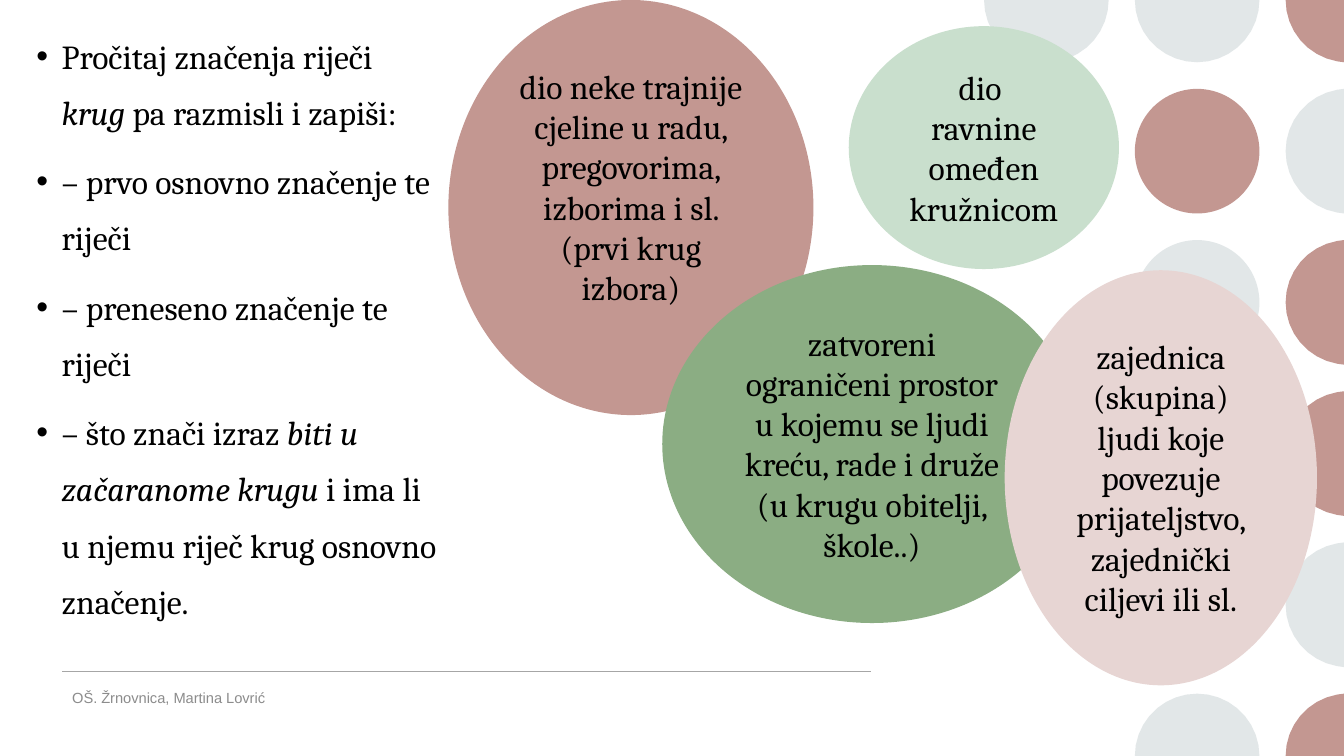
import math
from lxml import etree
from pptx import Presentation
from pptx import util as u
from pptx.dml.color import RGBColor
from pptx.enum import shapes, text
from pptx.oxml.ns import qn

# Content: each paragraph is a list of (text, italic) spans
COLOURS = {"rose": "C39791", "mist": "E2E7E8", "mint": "C9DFCD", "sage": "8BAD83",
           "blush": "E7D5D3", "black": "000000", "rule": "A6A6A6", "footer": "8C8C8C"}
TASKS = [
    [("Pročitaj značenja riječi ", False), ("krug", True), (" pa razmisli i zapiši:", False)],
    [("– prvo osnovno značenje te riječi", False)],
    [("– preneseno značenje te riječi", False)],
    [("– što znači izraz ", False), ("biti u začaranome krugu ", True),
     ("i ima li u njemu riječ krug osnovno značenje.", False)],
]
# Left, top, width, height in cm, colour, paragraphs
MEANINGS = [
    (11.3, 0, 9.2, 10.46, "rose",
     ["dio neke trajnije cjeline u radu, pregovorima, izborima i sl. (prvi krug izbora)"]),
    (21.39, 0.66, 6.81, 6.12, "mint", ["dio ", "ravnine omeđen kružnicom"]),
    (16.69, 6.68, 10.57, 9.02, "sage",
     ["zatvoreni ograničeni prostor u kojemu se ljudi kreću, rade i druže "
      "(u krugu obitelji, škole..)"]),
    (25.32, 6.81, 7.87, 10.46, "blush",
     ["zajednica (skupina) ljudi koje povezuje prijateljstvo, zajednički ciljevi ili sl."]),
]
FOOTER = "OŠ. Žrnovnica, Martina Lovrić"
# Dot colours by column, from the top row down; None leaves a gap
DOT_COLUMNS = [
    ["mist", "mist"],
    ["mist", "rose", "mist", "mist", None, "mist"],
    ["rose", "mist", "rose", "rose", "mist", "rose"],
]
WIDTH, HEIGHT = 33.87, 19.05
DOT_X, DOT_PITCH, DOT_RADIUS = 26.37, 3.8, 1.57
ROW_PITCH = HEIGHT / 5

deck = Presentation()
deck.slide_width, deck.slide_height = u.Cm(WIDTH), u.Cm(HEIGHT)
page = deck.slides.add_slide(deck.slide_layouts[1])
page.shapes.title.element.getparent().remove(page.shapes.title.element)


def colour(name):
    return RGBColor.from_string(COLOURS[name])


def paint(shape, name):
    shape.fill.solid()
    shape.fill.fore_color.rgb = colour(name)
    shape.line.fill.background()
    shape.shadow.inherit = False


def add_span(para, words, size=24, font="Cambria", ink="black", italic=False):
    span = para.add_run()
    span.text = words
    span.font.size, span.font.name, span.font.italic = u.Pt(size), font, italic
    span.font.color.rgb = colour(ink)


def paragraph(frame, index):
    return frame.paragraphs[0] if index == 0 else frame.add_paragraph()


def add_oval(left, top, width, height, name):
    oval = page.shapes.add_shape(shapes.MSO_SHAPE.OVAL, *map(u.Cm, (left, top, width, height)))
    paint(oval, name)
    return oval


def add_dot(x, y, name):
    """Draw a whole circle, or the half or quarter that lies on the page."""
    r = DOT_RADIUS
    right, top, bottom = x + r > WIDTH, y < r, y + r > HEIGHT
    if not (right or top or bottom):
        add_oval(x - r, y - r, 2 * r, 2 * r, name)
        return
    start, end = (90, 270) if right else (0, 360)
    if top:
        end = 180
    if bottom:
        start = 180
    points = []
    for degree in range(start, end + 1, 10):
        angle = math.radians(degree)
        points.append((x + r * math.cos(angle), y + r * math.sin(angle)))
    points.append((x, y))
    outline = [(u.Cm(min(across, WIDTH)), u.Cm(down)) for across, down in points]
    builder = page.shapes.build_freeform(*outline[0])
    builder.add_line_segments(outline[1:], close=True)
    paint(builder.convert_to_shape(), name)


# Dot pattern on the right
for column, names in enumerate(DOT_COLUMNS):
    for row, name in enumerate(names):
        if name:
            add_dot(DOT_X + column * DOT_PITCH, row * ROW_PITCH, name)

# Rule above the footer
rule = page.shapes.add_connector(shapes.MSO_CONNECTOR.STRAIGHT,
                                 u.Cm(1.57), u.Cm(16.92), u.Cm(21.95), u.Cm(16.92))
rule.line.color.rgb = colour("rule")
rule.line.width = u.Pt(1)
etree.SubElement(rule.element.spPr, qn("a:effectLst"))

# Task list
body = page.placeholders[1]
body.left, body.top, body.width, body.height = map(u.Cm, (0.66, 0.36, 10.67, 15.88))
body.text_frame.auto_size = text.MSO_AUTO_SIZE.NONE
for index, spans in enumerate(TASKS):
    para = paragraph(body.text_frame, index)
    para.line_spacing, para.space_before = 1.4, u.Pt(9)
    props = para._p.get_or_add_pPr()
    props.set("marL", str(u.Cm(0.64)))
    props.set("indent", str(-u.Cm(0.64)))
    etree.SubElement(props, qn("a:buFont"), typeface="Arial")
    etree.SubElement(props, qn("a:buChar"), char="•")
    for words, italic in spans:
        add_span(para, words, italic=italic)

# Meanings in ovals
for left, top, width, height, name, lines in MEANINGS:
    frame = add_oval(left, top, width, height, name).text_frame
    frame.word_wrap = True
    frame.vertical_anchor = text.MSO_ANCHOR.TOP
    frame.auto_size = text.MSO_AUTO_SIZE.SHAPE_TO_FIT_TEXT
    for index, words in enumerate(lines):
        para = paragraph(frame, index)
        para.alignment = text.PP_ALIGN.CENTER
        add_span(para, words)

# Footer
box = page.shapes.add_textbox(*map(u.Cm, (1.57, 17.07, 10.03, 1.02)))
box.text_frame.word_wrap = True
box.text_frame.vertical_anchor = text.MSO_ANCHOR.MIDDLE
add_span(box.text_frame.paragraphs[0], FOOTER, size=10.5, font="Arial", ink="footer")

deck.save("out.pptx")
